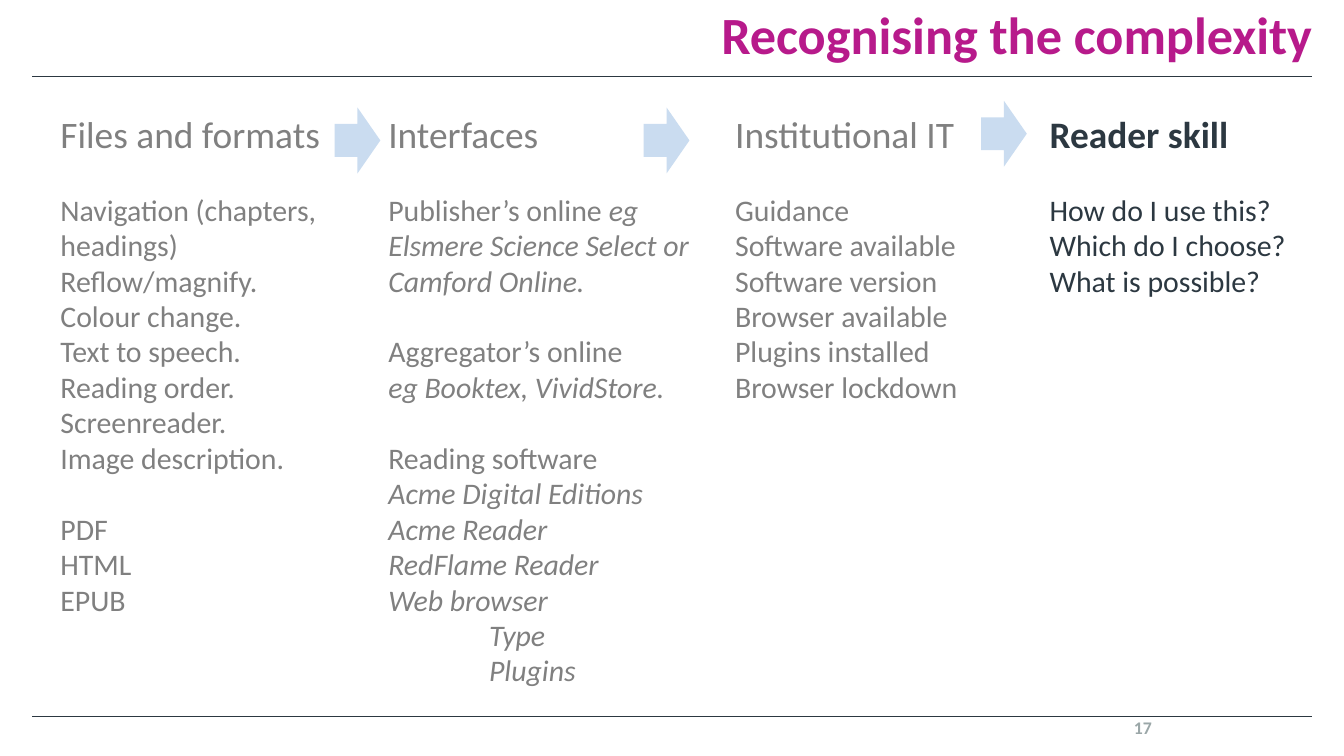
import pptx
import pptx.dml.color
import pptx.enum.shapes
import pptx.enum.text
import pptx.oxml.ns
import pptx.util
import lxml.etree

Inches = pptx.util.Inches
Pt = pptx.util.Pt
ALIGN = pptx.enum.text.PP_ALIGN
ANCHOR = pptx.enum.text.MSO_ANCHOR
FIT = pptx.enum.text.MSO_AUTO_SIZE

COLORS = {"title": "B71A8B", "dark": "2C3841", "muted": "808080",
          "number": "9BA7A8", "arrow": "CADCF0"}
PAD = (0.08, 0.04, 0.08, 0.04)
SIDES = ("margin_left", "margin_top", "margin_right", "margin_bottom")


def color(name):
    """Return the named colour."""
    return pptx.dml.color.RGBColor.from_string(COLORS[name])


def assign(target, values):
    """Set each attribute of the target from a dict."""
    for name, value in values.items():
        setattr(target, name, value)


def write(para, text, hue, **style):
    """Add a run of styled text to a paragraph."""
    run = para.add_run()
    run.text = text
    assign(run.font, {"name": "Calibri", **style})
    run.font.color.rgb = color(hue)


def frame(slide, place, pad=(0, 0, 0, 0), **style):
    """Add a wrapping text box and return its text frame."""
    body = slide.shapes.add_textbox(*map(Inches, place)).text_frame
    insets = dict(zip(SIDES, map(Inches, pad)))
    assign(body, {"word_wrap": True, **insets, **style})
    return body


def label(slide, place, text, hue, size, spacing=1.0, **style):
    """Add one bold line aligned to the right."""
    para = frame(slide, place, **style).paragraphs[0]
    assign(para, {"alignment": ALIGN.RIGHT, "line_spacing": spacing})
    write(para, text, hue, size=Pt(size), bold=True)


def row(plain="", slant="", indent=0):
    """Describe a line with a plain part, an italic part and an indent."""
    return plain, slant, indent


def column(slide, place, head, groups, hue="muted", bold=False):
    """Add a heading with groups of lines set apart by one line."""
    body = frame(slide, place, PAD, auto_size=FIT.SHAPE_TO_FIT_TEXT)
    first = body.paragraphs[0]
    first.line_spacing = 0.99
    write(first, head, hue, size=Pt(20), bold=bold)
    for group in groups:
        for index, (plain, slant, indent) in enumerate(group):
            para = body.add_paragraph()
            gap = Pt(0 if index else 19)
            assign(para, {"line_spacing": 0.99, "space_before": gap})
            if indent:
                para._p.get_or_add_pPr().set("marL", str(Inches(indent)))
            for text, italic in ((plain, False), (slant, True)):
                if text:
                    write(para, text, hue, size=Pt(16), italic=italic)


def rule(slide, y):
    """Draw a thin line across the slide."""
    ends = map(Inches, (0.24, y, 9.76, y))
    line = slide.shapes.add_connector(
        pptx.enum.shapes.MSO_CONNECTOR.STRAIGHT, *ends)
    line.line.width = Pt(0.5)
    line.line.color.rgb = color("dark")
    lxml.etree.SubElement(
        line._element.spPr, pptx.oxml.ns.qn("a:effectLst"))


def arrow(slide, x, y):
    """Draw a block arrow pointing to the next column."""
    shape = slide.shapes.add_shape(
        pptx.enum.shapes.MSO_SHAPE.RIGHT_ARROW,
        *map(Inches, (x, y, 0.34, 0.49)))
    shape.shadow.inherit = False
    shape.fill.solid()
    shape.fill.fore_color.rgb = color("arrow")
    shape.line.fill.background()


def main():
    """Build the slide and save it."""
    deck = pptx.Presentation()
    wide = Inches(10)
    assign(deck, {"slide_width": wide, "slide_height": wide * 9 // 16})
    slide = deck.slides.add_slide(deck.slide_layouts[6])

    for y in (0.57, 5.33):
        rule(slide, y)
    label(slide, (3.03, 0, 6.73, 0.49), "Recognising the complexity",
          "title", 28, 0.9, vertical_anchor=ANCHOR.BOTTOM)
    label(slide, (7.78, 5.33, 0.79, 0.18), "17", "number", 9.5)

    files = [
        [row(text) for text in (
            "Navigation (chapters, headings)", "Reflow/magnify.",
            "Colour change.", "Text to speech.", "Reading order.",
            "Screenreader.", "Image description.")],
        [row(text) for text in ("PDF", "HTML", "EPUB")],
    ]
    faces = [
        [row("Publisher’s online ",
             "eg Elsmere Science Select or Camford Online.")],
        [row("Aggregator’s online"), row(slant="eg Booktex, VividStore.")],
        [row("Reading software"),
         *(row(slant=text) for text in (
             "Acme Digital Editions", "Acme Reader",
             "RedFlame Reader", "Web browser")),
         *(row(slant=text, indent=0.75) for text in ("Type", "Plugins"))],
    ]
    campus = [[row(text) for text in (
        "Guidance", "Software available", "Software version",
        "Browser available", "Plugins installed", "Browser lockdown")]]
    skills = [[row(text) for text in (
        "How do I use this?", "Which do I choose?", "What is possible?")]]

    column(slide, (0.37, 0.8, 2.33, 3.88), "Files and formats", files)
    column(slide, (2.81, 0.8, 2.4, 4.41), "Interfaces", faces)
    column(slide, (5.39, 0.8, 2.2, 3.75), "Institutional IT", campus)
    column(slide, (7.73, 0.8, 1.93, 1.75), "Reader skill", skills,
           "dark", True)

    for x, y in ((2.49, 0.8), (4.79, 0.8), (7.3, 0.75)):
        arrow(slide, x, y)
    deck.save("out.pptx")


if __name__ == "__main__":
    main()
